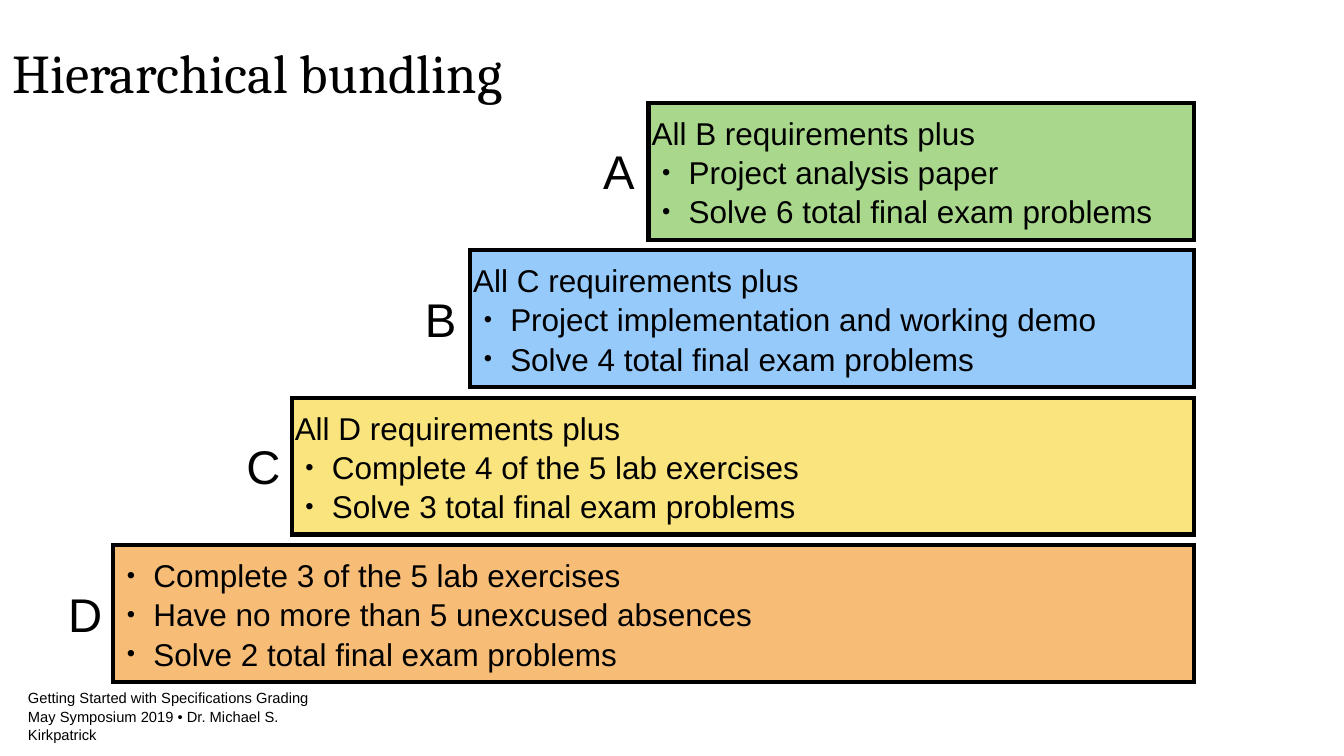
from lxml import etree
from pptx import Presentation
from pptx.dml.color import RGBColor
from pptx.enum.shapes import MSO_SHAPE
from pptx.enum.text import MSO_ANCHOR, PP_ALIGN
from pptx.oxml.ns import qn
from pptx.util import Pt

PX = 9144
RECT = MSO_SHAPE.RECTANGLE
MID = MSO_ANCHOR.MIDDLE
LEFT = PP_ALIGN.LEFT

TITLE = "Hierarchical bundling"
FOOTER = [
    "Getting Started with Specifications Grading",
    "May Symposium 2019 • Dr. Michael S. Kirkpatrick",
]
GRADES = [
    ("A", "70BF41", 60, "All B requirements plus",
     ["Project analysis paper", "Solve 6 total final exam problems"]),
    ("B", "51A8F9", 60, "All C requirements plus",
     ["Project implementation and working demo",
      "Solve 4 total final exam problems"]),
    ("C", "F5D328", 60, "All D requirements plus",
     ["Complete 4 of the 5 lab exercises",
      "Solve 3 total final exam problems"]),
    ("D", "F38F18", 59, None,
     ["Complete 3 of the 5 lab exercises",
      "Have no more than 5 unexcused absences",
      "Solve 2 total final exam problems"]),
]

BOX_X, BOX_Y, BOX_H, RIGHT = 858, 136, 181, 1580
STEP_X, STEP_Y = 236, 195
TAG_W, TAG_H, TAG_GAP = 62, 92, 2


def color(code):
    return RGBColor.from_string(code)


def area(x, y, w, h):
    return [n * PX for n in (x, y, w, h)]


def add_bullet(para):
    props = para._p.get_or_add_pPr()
    props.set("marL", str(49 * PX))
    props.set("indent", str(-35 * PX))
    etree.SubElement(props, qn("a:buSzPct")).set("val", "75000")
    etree.SubElement(props, qn("a:buFont")).set("typeface", "Arial")
    etree.SubElement(props, qn("a:buChar")).set("char", "•")


def write(shape, lines, size, font="Arial", wrap=True, space=1.0):
    frame = shape.text_frame
    frame.word_wrap = wrap
    frame.vertical_anchor = MID
    frame.margin_left = frame.margin_right = 4 * PX
    frame.margin_top = frame.margin_bottom = 4 * PX
    for i, (text, bullet) in enumerate(lines):
        para = frame.add_paragraph() if i else frame.paragraphs[0]
        para.alignment = LEFT
        para.line_spacing = space
        if bullet:
            add_bullet(para)
        run = para.add_run()
        run.text = text
        run.font.name = font
        run.font.size = Pt(size)
        run.font.color.rgb = color("000000")


def add_box(slide, x, y, fill, alpha, lines):
    box = slide.shapes.add_shape(RECT, *area(x, y, RIGHT - x, BOX_H))
    box.shadow.inherit = False
    box.fill.solid()
    box.fill.fore_color.rgb = color(fill)
    tone = box.fill._xPr.find(".//" + qn("a:srgbClr"))
    etree.SubElement(tone, qn("a:alpha")).set("val", str(alpha * 1000))
    box.line.color.rgb = color("000000")
    box.line.width = Pt(4)
    etree.SubElement(box.line._ln, qn("a:miter")).set("lim", "400000")
    write(box, lines, 30, space=1.04)


def main():
    deck = Presentation()
    deck.slide_width, deck.slide_height = 1778 * PX, 1000 * PX
    slide = deck.slides.add_slide(deck.slide_layouts[5])

    title = slide.shapes.title
    title.left, title.top, title.width, title.height = area(12, 40, 1131, 110)
    write(title, [(TITLE, False)], 52, "Cambria")

    foot = slide.shapes.add_textbox(*area(33, 917, 436, 60))
    write(foot, [(line, False) for line in FOOTER], 14, wrap=False, space=1.04)

    for i, (grade, fill, alpha, head, tasks) in enumerate(GRADES):
        x, y = BOX_X - i * STEP_X, BOX_Y + i * STEP_Y
        lines = [(head, False)] if head else []
        lines += [(task, True) for task in tasks]
        add_box(slide, x, y, fill, alpha, lines)
        tag = slide.shapes.add_textbox(*area(
            x - TAG_GAP - TAG_W, y + (BOX_H - TAG_H) // 2, TAG_W, TAG_H))
        write(tag, [(grade, False)], 45)

    deck.save("out.pptx")


if __name__ == "__main__":
    main()
